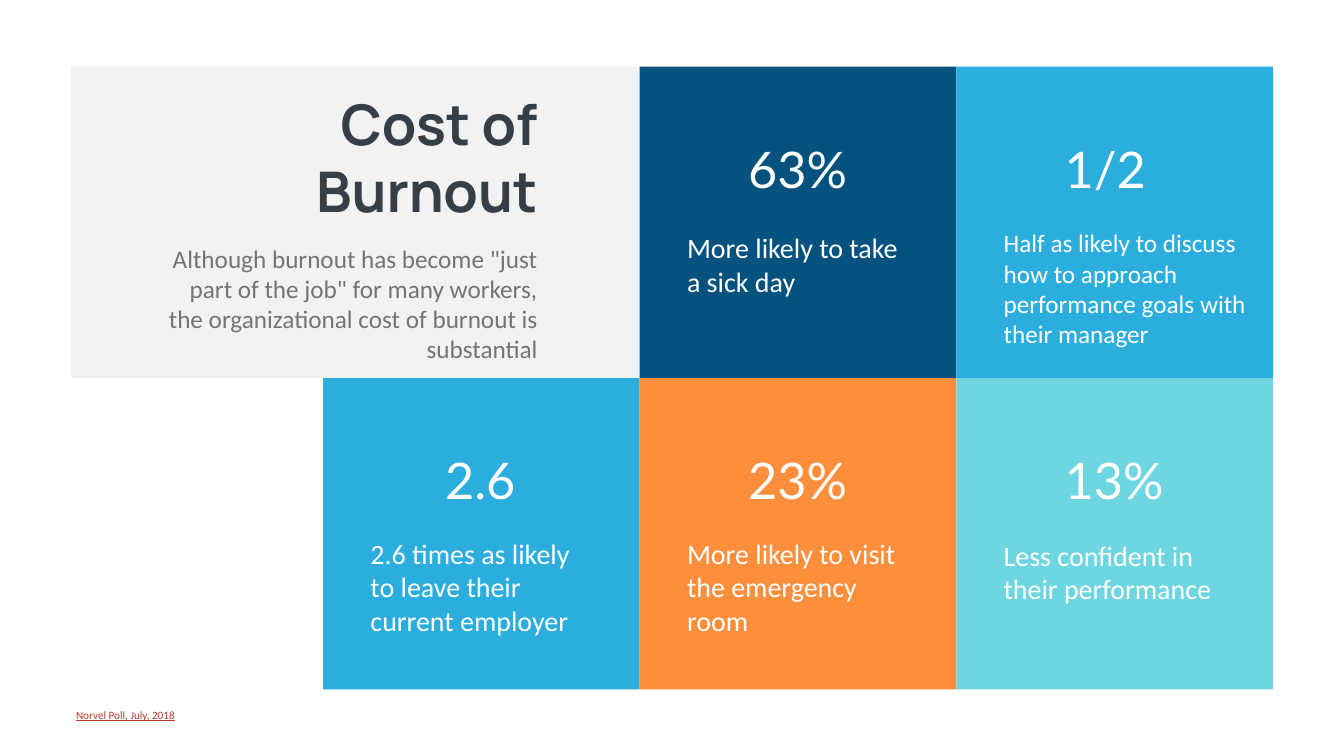
from dataclasses import dataclass

from pptx import Presentation
from pptx.dml.color import RGBColor
from pptx.enum.shapes import MSO_SHAPE
from pptx.enum.text import MSO_AUTO_SIZE, PP_ALIGN
from pptx.util import Inches, Pt

RECTANGLE = MSO_SHAPE.RECTANGLE
GROW = MSO_AUTO_SIZE.SHAPE_TO_FIT_TEXT
LEFT, RIGHT = PP_ALIGN.LEFT, PP_ALIGN.RIGHT


@dataclass(frozen=True)
class Theme:
    """Colours and text formats of the slide."""
    panel: str = "F2F2F2"
    navy: str = "06527F"
    blue: str = "2BAEDD"
    orange: str = "FD8F3C"
    aqua: str = "6ED6E1"
    title: tuple = ("Manrope", 80, "363E48", {"bold": True})
    summary: tuple = ("Calibri", 36, "737572", {})
    figure: tuple = ("Lato", 72, "FFFFFF", {})
    label: tuple = ("Calibri", 40, "FFFFFF", {})
    small_label: tuple = ("Calibri", 36, "FFFFFF", {})
    source: tuple = ("Calibri", 16, "BD392F", {"underline": True})


THEME = Theme()
CARD_WIDTH, CARD_HEIGHT = 6.28, 6.18
GRID_LEFT, GRID_TOP = 6.41, 1.32

CARDS = [
    (1, 0, THEME.navy, "63%", "More likely to take a sick day",
     THEME.label, (0.84, 3.21, 4.61, 1.45), (2.05, 2.19)),
    (2, 0, THEME.blue, "1/2",
     "Half as likely to discuss how to approach performance goals with their manager",
     THEME.small_label, (0.84, 3.15, 5.05, 2.52), (2.05, 2.19)),
    (0, 1, THEME.blue, "2.6", "2.6 times as likely to leave their current employer",
     THEME.label, (0.84, 3.09, 4.61, 2.12), (2.32, 1.64)),
    (1, 1, THEME.orange, "23%", "More likely to visit the emergency room",
     THEME.label, (0.84, 3.09, 4.61, 2.12), (2.05, 2.19)),
    (2, 1, THEME.aqua, "13%", "Less confident in their performance",
     THEME.label, (0.84, 3.13, 4.61, 1.45), (2.05, 2.19)),
]


def add_block(slide, box, color):
    """Add a plain filled rectangle."""
    shape = slide.shapes.add_shape(RECTANGLE, *map(Inches, box))
    shape.shadow.inherit = False
    shape.fill.solid()
    shape.fill.fore_color.rgb = RGBColor.from_string(color)
    shape.line.fill.background()


def add_text(slide, box, text, style, alignment=LEFT):
    """Add a wrapped text box in one text style."""
    frame = slide.shapes.add_textbox(*map(Inches, box)).text_frame
    frame.word_wrap = True
    frame.auto_size = GROW
    paragraph = frame.paragraphs[0]
    paragraph.alignment = alignment
    run = paragraph.add_run()
    run.text = text
    name, size, color, extras = style
    for attribute, value in {"name": name, "size": Pt(size), **extras}.items():
        setattr(run.font, attribute, value)
    run.font.color.rgb = RGBColor.from_string(color)


def add_title_panel(slide, box):
    """Add the panel with the title and its summary."""
    left, top, _, _ = box
    add_block(slide, box, THEME.panel)
    add_text(slide, (left + 1.58, top + 0.4, 7.77, 2.37),
             "Cost of Burnout", THEME.title, RIGHT)
    add_text(slide, (left + 1.58, top + 3.45, 7.77, 2.52),
             'Although burnout has become "just part of the job" for many workers, '
             "the organizational cost of burnout is substantial", THEME.summary, RIGHT)


def add_card(slide, box, color, figure, label, label_style, label_box, figure_span):
    """Add a coloured card with a large figure above its label."""
    left, top, _, _ = box
    label_left, label_top, label_width, label_height = label_box
    figure_left, figure_width = figure_span
    add_block(slide, box, color)
    add_text(slide, (left + figure_left, top + 1.37, figure_width, 1.31),
             figure, THEME.figure)
    add_text(slide, (left + label_left, top + label_top, label_width, label_height),
             label, label_style)


def add_source(slide, box):
    """Add the underlined source line."""
    add_text(slide, box, "Norvel Poll, July, 2018", THEME.source)


def main():
    """Build and save the slide."""
    presentation = Presentation()
    presentation.slide_width = Inches(26.66)
    presentation.slide_height = Inches(15)
    slide = presentation.slides.add_slide(presentation.slide_layouts[6])
    add_title_panel(slide, (1.41, GRID_TOP, 11.28, CARD_HEIGHT))
    for column, row, *content in CARDS:
        box = (GRID_LEFT + column * CARD_WIDTH, GRID_TOP + row * CARD_HEIGHT,
               CARD_WIDTH, CARD_HEIGHT)
        add_card(slide, box, *content)
    add_source(slide, (1.41, 14, 21.31, 0.37))
    presentation.save("out.pptx")


if __name__ == "__main__":
    main()
